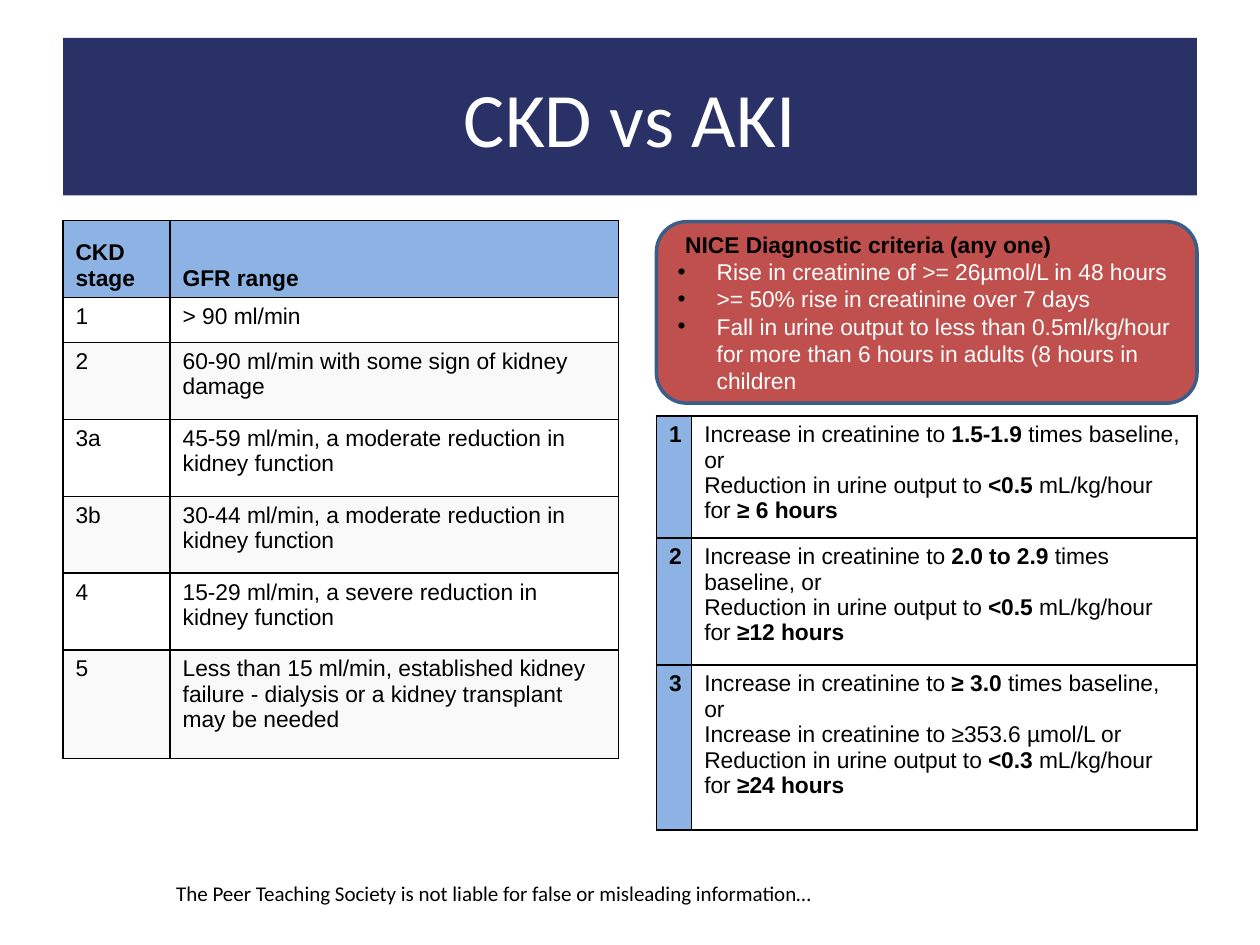
from lxml import etree
from pptx import Presentation
from pptx import util as u
from pptx.dml.color import RGBColor
from pptx.enum import shapes, text
from pptx.oxml.ns import qn

NAVY, SKY, RED, EDGE = "293167", "8CB3E3", "C0504D", "395E89"
WHITE, GREY, BLACK = "FFFFFF", "F9F9F9", "000000"

TITLE = "CKD vs AKI"
FOOTER = "The Peer Teaching Society is not liable for false or misleading information…"
CKD_STAGES = [
    ("**CKD stage**", "**GFR range**"),
    ("1", "> 90 ml/min"),
    ("2", "60-90 ml/min with some sign of kidney damage"),
    ("3a", "45-59 ml/min, a moderate reduction in kidney function"),
    ("3b", "30-44 ml/min, a moderate reduction in kidney function"),
    ("4", "15-29 ml/min, a severe reduction in kidney function"),
    ("5", "Less than 15 ml/min, established kidney failure - dialysis "
          "or a kidney transplant may be needed"),
]
CRITERIA_HEAD = "**NICE Diagnostic criteria (any one)**"
CRITERIA = [
    "Rise in creatinine of >= 26µmol/L in 48 hours",
    ">= 50% rise in creatinine over 7 days",
    "Fall in urine output to less than 0.5ml/kg/hour for more than 6 hours "
    "in adults (8 hours in children",
]
AKI_STAGES = [
    ("**1**", "Increase in creatinine to **1.5-1.9** times baseline, or\n"
              "Reduction in urine output to **<0.5** mL/kg/hour for **≥ 6 hours**"),
    ("**2**", "Increase in creatinine to **2.0 to 2.9** times baseline, or \n"
              "Reduction in urine output to **<0.5** mL/kg/hour for **≥12 hours**"),
    ("**3**", "Increase in creatinine to **≥ 3.0** times baseline, or \n"
              "Increase in creatinine to ≥353.6 µmol/L or \n"
              "Reduction in urine output to **<0.3** mL/kg/hour for **≥24 hours**"),
]

LEFT, RIGHT, WIDTH = 0.5, 5.21, 4.29
CKD_COLS, CKD_ROWS = (0.85, 3.56), (0.61, 0.36, 0.61, 0.61, 0.61, 0.61, 0.86)
AKI_COLS, AKI_ROWS = (0.28, 4.01), (0.91, 1.01, 1.31)


def rgb(value):
    return RGBColor.from_string(value)


def box(*lengths):
    return [u.Inches(n) for n in lengths]


def paint(target, value):
    target.fill.solid()
    target.fill.fore_color.rgb = rgb(value)


def write(p, content, size=13, font="Arial", color=BLACK):
    for n, line in enumerate(content.split("\n")):
        if n:
            p.add_line_break()
        for i, part in enumerate(line.split("**")):
            if part:
                r = p.add_run()
                r.text = part
                r.font.size, r.font.name = u.Pt(size), font
                r.font.bold = i % 2 == 1
                r.font.color.rgb = rgb(color)


def indent(p, margin, first=0, bullet=None):
    pPr = p._p.get_or_add_pPr()
    pPr.set("marL", str(u.Inches(margin)))
    pPr.set("indent", str(u.Inches(first)))
    if bullet:
        clr = etree.SubElement(pPr, qn("a:buClr"))
        etree.SubElement(clr, qn("a:srgbClr"), val=BLACK)
        etree.SubElement(pPr, qn("a:buFont"), typeface="Arial")
        etree.SubElement(pPr, qn("a:buChar"), char=bullet)


def border(cell):
    tcPr = cell._tc.get_or_add_tcPr()
    for n, side in enumerate(("a:lnL", "a:lnR", "a:lnT", "a:lnB")):
        ln = etree.Element(qn(side), w=str(u.Pt(1)))
        fill = etree.SubElement(ln, qn("a:solidFill"))
        etree.SubElement(fill, qn("a:srgbClr"), val=BLACK)
        tcPr.insert(n, ln)


def add_grid(slide, rows, left, top, widths, heights, fill_of):
    frame = slide.shapes.add_table(len(rows), len(widths),
                                   *box(left, top, sum(widths), sum(heights)))
    table = frame.table
    for col, width in zip(table.columns, widths):
        col.width = u.Inches(width)
    for y, (row, height) in enumerate(zip(rows, heights)):
        table.rows[y].height = u.Inches(height)
        for x, content in enumerate(row):
            cell = table.cell(y, x)
            paint(cell, fill_of(y, x))
            border(cell)
            write(cell.text_frame.paragraphs[0], content)
    return table


def main():
    prs = Presentation()
    prs.slide_width, prs.slide_height = box(10, 7.5)
    slide = prs.slides.add_slide(prs.slide_layouts[5])

    title = slide.shapes.title
    title.left, title.top, title.width, title.height = box(LEFT, 0.3, 9, 1.25)
    paint(title, NAVY)
    title.text_frame.vertical_anchor = text.MSO_ANCHOR.MIDDLE
    p = title.text_frame.paragraphs[0]
    p.alignment = text.PP_ALIGN.CENTER
    write(p, TITLE, size=44, font="Calibri", color=WHITE)

    footer = slide.shapes.add_textbox(*box(1.3, 6.94, 5.54, 0.3))
    footer.text_frame.word_wrap = True
    write(footer.text_frame.paragraphs[0], FOOTER, size=12, font="Calibri")

    ckd = add_grid(slide, CKD_STAGES, LEFT, 1.75, CKD_COLS, CKD_ROWS,
                   lambda y, x: SKY if y == 0 else (GREY, WHITE)[y % 2])
    for cell in ckd.rows[0].cells:
        cell.vertical_anchor = text.MSO_ANCHOR.BOTTOM

    sp = slide.shapes.add_shape(shapes.MSO_SHAPE.ROUNDED_RECTANGLE,
                                *box(RIGHT, 1.76, WIDTH, 1.44))
    sp.shadow.inherit = False
    paint(sp, RED)
    sp.line.color.rgb, sp.line.width = rgb(EDGE), u.Pt(2)
    tf = sp.text_frame
    tf.word_wrap, tf.vertical_anchor = True, text.MSO_ANCHOR.MIDDLE
    p = tf.paragraphs[0]
    indent(p, 0.06)
    write(p, CRITERIA_HEAD)
    for item in CRITERIA:
        p = tf.add_paragraph()
        indent(p, 0.31, -0.31, "•")
        write(p, item, color=WHITE)
    for p in tf.paragraphs:
        p.alignment = text.PP_ALIGN.LEFT

    add_grid(slide, AKI_STAGES, RIGHT, 3.3, AKI_COLS, AKI_ROWS,
             lambda y, x: WHITE if x else SKY)
    prs.save("out.pptx")


if __name__ == "__main__":
    main()
